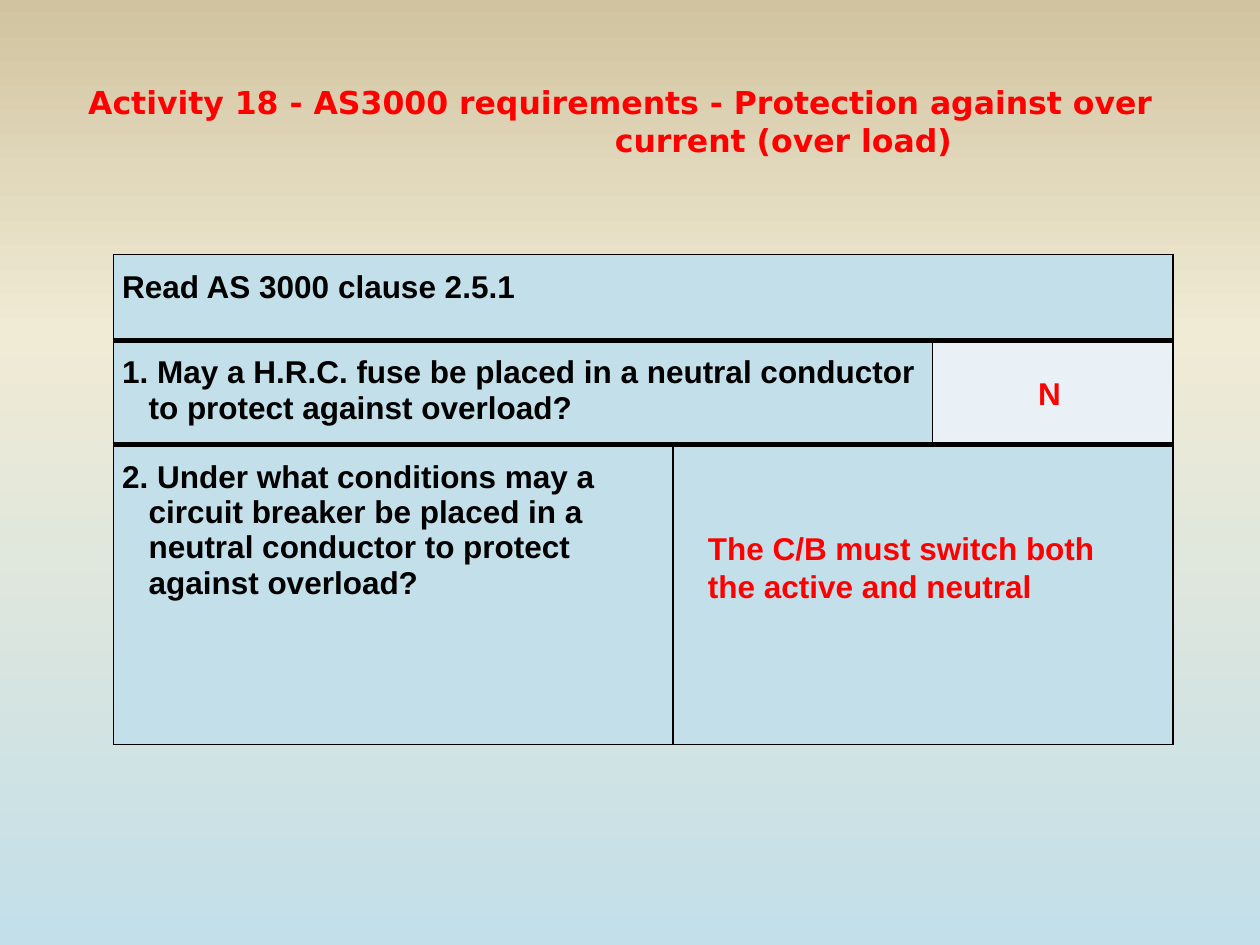
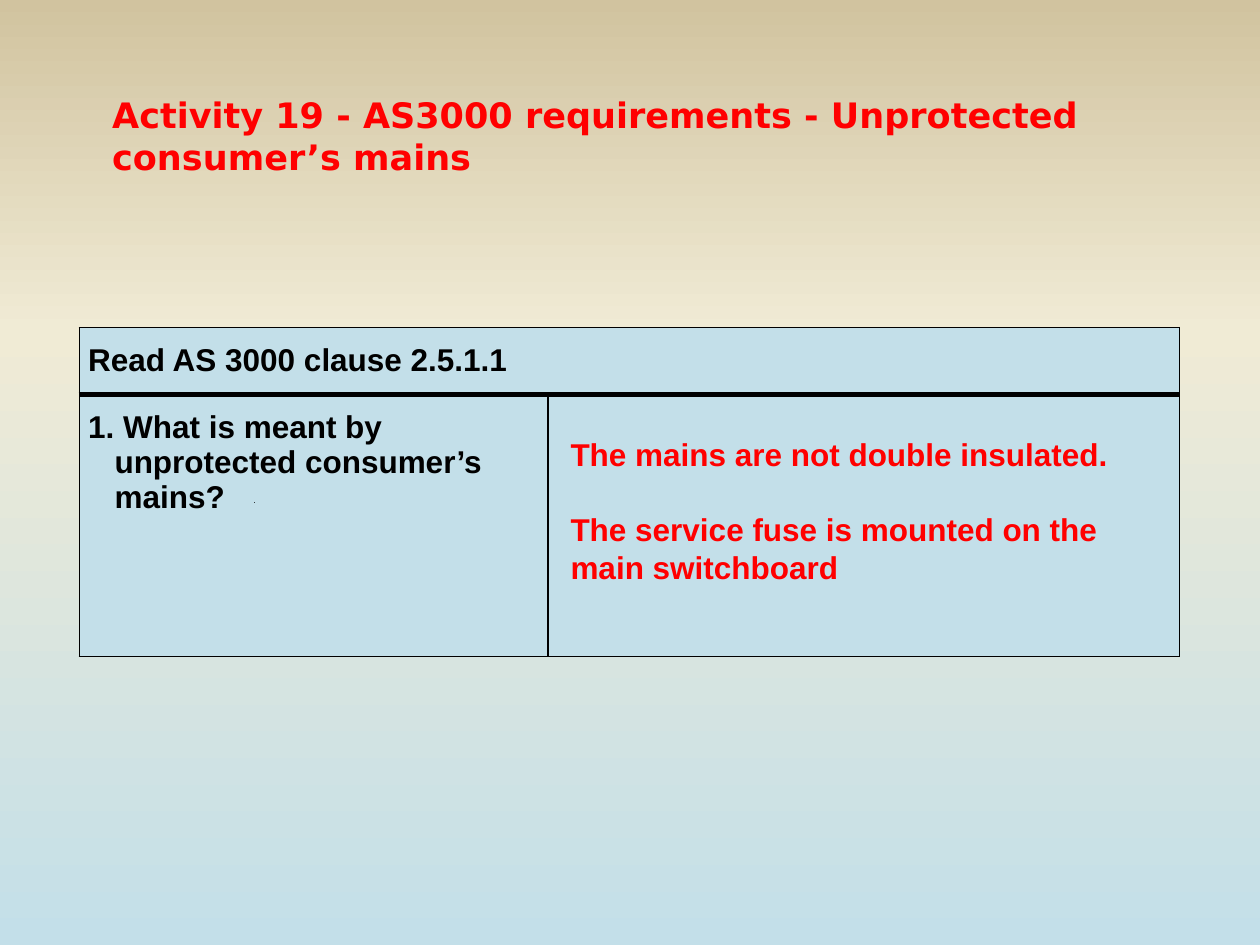
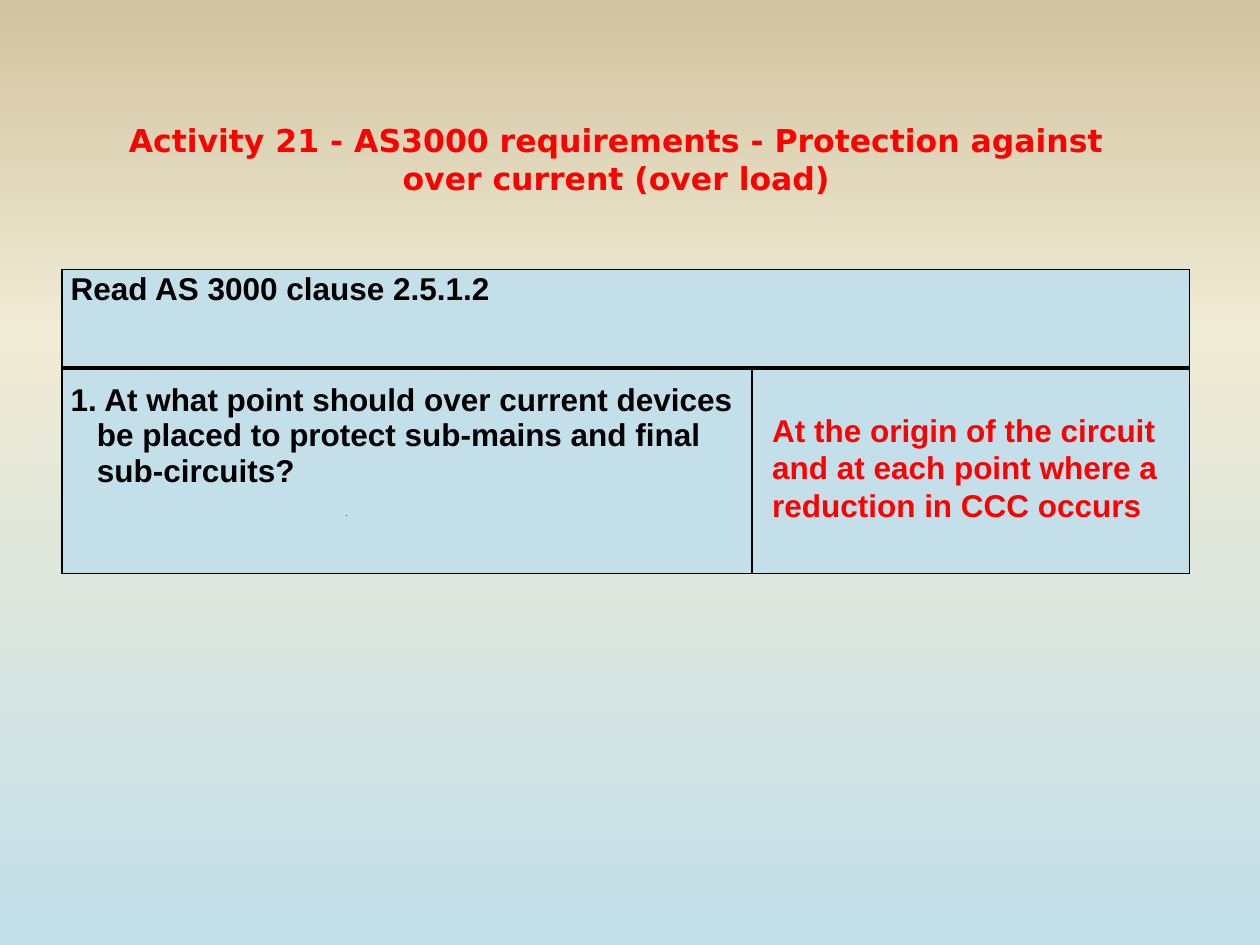
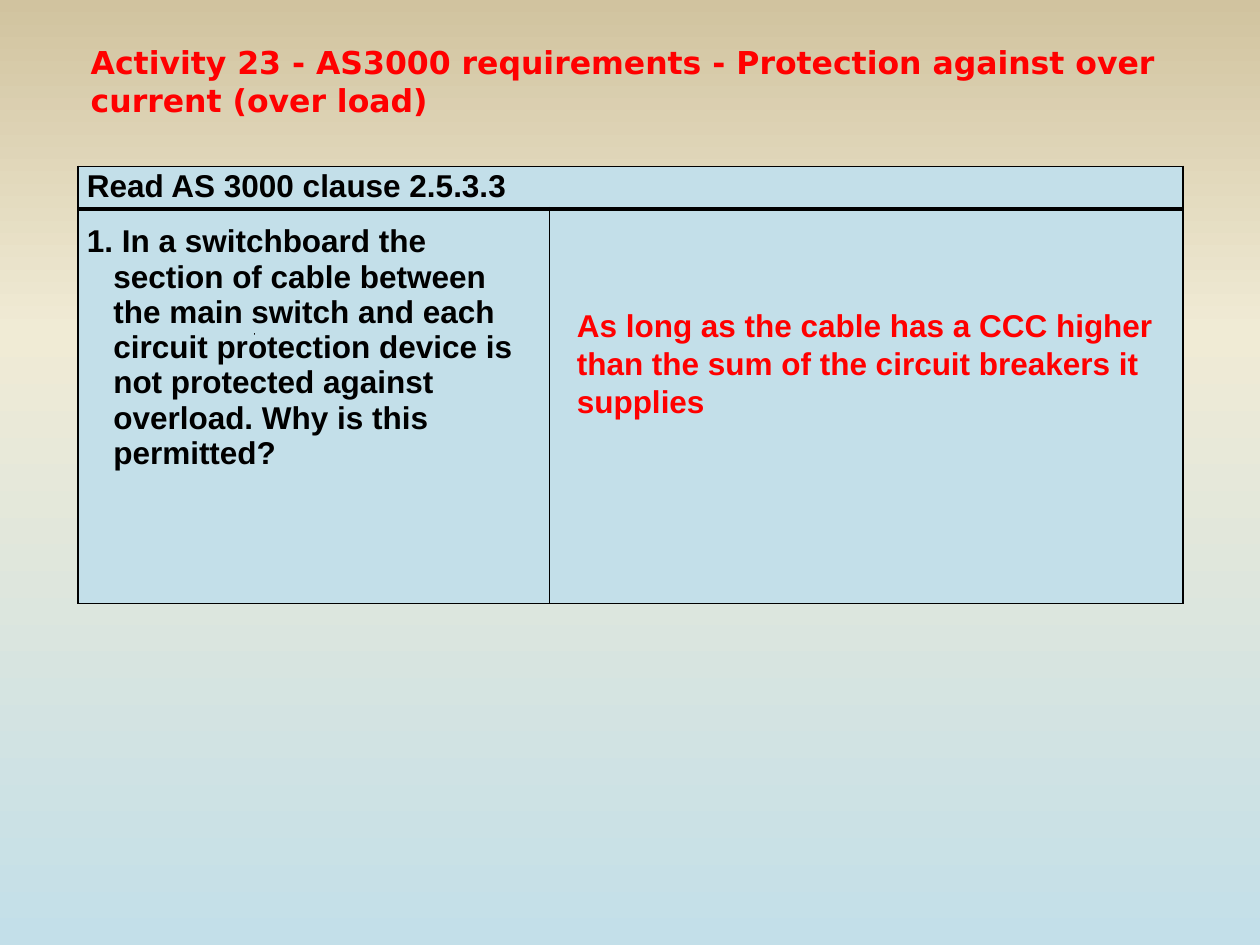
from copy import deepcopy
from pptx import Presentation
from pptx.dml.color import RGBColor
from pptx.enum.shapes import MSO_SHAPE
from pptx.enum.text import MSO_ANCHOR, MSO_AUTO_SIZE, PP_ALIGN
from pptx.oxml import parse_xml
from pptx.oxml.ns import nsdecls, qn
from pptx.util import Inches, Pt

SKY = RGBColor(0xC3, 0xDF, 0xE9)
CREAM = RGBColor(0xF0, 0xEB, 0xD5)
SAND = RGBColor(0xD1, 0xC3, 0x9F)
PALE = RGBColor(0xE9, 0xF1, 0xF7)
RED = RGBColor(0xFF, 0x00, 0x00)
BLACK = RGBColor(0x00, 0x00, 0x00)
TITLE_FONT, BODY_FONT = "DejaVu Sans", "Arial"
HANG = 0.21
TITLE_ONLY = 5


def set_background(master):
    """Vertical gradient shared by all slides, sky at the bottom."""
    fill = master.background.fill
    fill.gradient()
    fill.gradient_angle = 90
    stops = master.element.find(".//" + qn("a:gsLst"))
    stops.insert(1, deepcopy(stops[0]))
    for stop, pos, color in zip(fill.gradient_stops, (0, 0.65, 1), (SKY, CREAM, SAND)):
        stop.position = pos
        stop.color.rgb = color


def add_run(p, text, font, color, size=18):
    r = p.add_run()
    r.text = text
    r.font.name, r.font.size, r.font.bold = font, Pt(size), True
    r.font.color.rgb = color


def set_indent(p, left, first=0):
    pPr = p._p.get_or_add_pPr()
    pPr.set("marL", str(Inches(left)))
    pPr.set("indent", str(Inches(first)))


def fill_text(tf, lines, font, color, size=18, align=PP_ALIGN.LEFT):
    for i, line in enumerate(lines):
        p = tf.paragraphs[0] if i == 0 else tf.add_paragraph()
        p.alignment = align
        add_run(p, line, font, color, size)


def place(sp, left, top, width, height):
    sp.left, sp.top = Inches(left), Inches(top)
    sp.width, sp.height = Inches(width), Inches(height)


def add_title(s, lines, box, size=18, align=PP_ALIGN.LEFT):
    sp = s.shapes.title
    place(sp, *box)
    tf = sp.text_frame
    tf.vertical_anchor, tf.auto_size = MSO_ANCHOR.TOP, MSO_AUTO_SIZE.NONE
    fill_text(tf, lines, TITLE_FONT, RED, size, align)
    return tf


def add_answer(s, lines, box, wrap=True):
    tf = s.shapes.add_textbox(*map(Inches, box)).text_frame
    tf.word_wrap = wrap
    fill_text(tf, lines, BODY_FONT, RED)
    return tf


def add_dot(s, left, top):
    sp = s.shapes.add_shape(MSO_SHAPE.RECTANGLE, Inches(left), Inches(top), 0, 0)
    sp.shadow.inherit = False
    sp.fill.solid()
    sp.fill.fore_color.rgb = SKY
    sp.line.color.rgb, sp.line.width = BLACK, Pt(0.75)


def set_borders(cell, top, bottom):
    tcPr = cell._tc.get_or_add_tcPr()
    for i, (side, width) in enumerate(zip("LRTB", (1, 1, top, bottom))):
        tcPr.insert(i, parse_xml(
            f'<a:ln{side} {nsdecls("a")} w="{Pt(width)}"><a:solidFill>'
            f'<a:srgbClr val="{BLACK}"/></a:solidFill></a:ln{side}>'))


def write_cell(cell, text, header=False):
    p = cell.text_frame.paragraphs[0]
    p.space_before = Pt(6)
    if header:
        p.alignment = PP_ALIGN.JUSTIFY
    else:
        set_indent(p, HANG, -HANG)
    add_run(p, text, BODY_FONT, BLACK)


def add_question_table(s, left, top, cols, rows, texts, header_pad=0.12):
    """First row is the clause; the others hold a question and an answer cell."""
    table = s.shapes.add_table(len(rows), len(cols), Inches(left), Inches(top),
                               Inches(sum(cols)), Inches(sum(rows))).table
    for col, width in zip(table.columns, cols):
        col.width = Inches(width)
    last = len(rows) - 1
    for i, height in enumerate(rows):
        table.rows[i].height = Inches(height)
        pad = 0.12 if i else header_pad
        for cell in table.rows[i].cells:
            cell.margin_left = cell.margin_right = Inches(0.07)
            cell.margin_top = cell.margin_bottom = Inches(pad)
            cell.fill.solid()
            cell.fill.fore_color.rgb = SKY
            set_borders(cell, 3 if i else 1, 3 if i < last else 1)
        write_cell(table.cell(i, 0), texts[i], header=i == 0)
    table.cell(0, 0).merge(table.cell(0, len(cols) - 1))
    return table


def activity_18(s):
    table = add_question_table(
        s, 0.9, 2.02, (4.44, 2.06, 1.91), (0.68, 0.83, 2.38),
        ("Read AS 3000 clause 2.5.1",
         "1. May a H.R.C. fuse be placed in a neutral conductor to protect against overload?",
         "2. Under what conditions may a circuit breaker be placed in a neutral "
         "conductor to protect against overload?"))
    table.cell(1, 0).merge(table.cell(1, 1))
    table.cell(2, 1).merge(table.cell(2, 2))
    table.cell(1, 2).fill.fore_color.rgb = PALE
    add_dot(s, 2.95, 3.2)
    tf = add_title(s, ("Activity 18 - AS3000 requirements - Protection against over",
                       "current (over load)"), (0.6, 0.61, 8.84, 0.71))
    set_indent(tf.paragraphs[1], 4.18)
    add_answer(s, ["N"], (8.14, 2.92, 0.48, 0.4))
    add_answer(s, ["The C/B must switch both the active and neutral"], (5.52, 4.15, 3.6, 0.71))


def activity_19(s):
    add_question_table(
        s, 0.63, 2.6, (3.72, 5.01), (0.53, 2.08),
        ("Read AS 3000 clause 2.5.1.1",
         "1. What is meant by unprotected consumer’s mains?"))
    add_dot(s, 2.02, 3.99)
    add_title(s, ["Activity 19 - AS3000 requirements - Unprotected consumer’s mains"],
              (0.79, 0.69, 8.4, 0.77), size=20)
    tf = add_answer(s, ("The mains are not double insulated.",
                        "The service fuse is mounted on the main switchboard"),
                    (4.43, 3.4, 4.76, 1.31))
    tf.paragraphs[1].space_before = Pt(21.6)


def activity_21(s):
    add_question_table(
        s, 0.49, 2.14, (5.48, 3.47), (0.78, 1.63),
        ("Read AS 3000 clause 2.5.1.2",
         "1. At what point should over current devices be placed to protect "
         "sub-mains and final sub-circuits?"), header_pad=0.02)
    add_dot(s, 2.75, 4.09)
    add_title(s, ["Activity 21 - AS3000 requirements - Protection against over current (over load)"],
              (0.67, 0.91, 8.44, 0.71), align=PP_ALIGN.CENTER)
    add_answer(s, ["At the origin of the circuit and at each point where a reduction in CCC occurs"],
               (6.03, 3.21, 3.35, 1.01))


def activity_23(s):
    add_question_table(
        s, 0.62, 1.32, (3.74, 5.03), (0.34, 3.13),
        ("Read AS 3000 clause 2.5.3.3",
         "1. In a switchboard the section of cable between the main switch and each "
         "circuit protection device is not protected against overload. Why is this permitted?"),
        header_pad=0.02)
    add_dot(s, 2.02, 2.65)
    add_title(s, ["Activity 23 - AS3000 requirements - Protection against over current (over load)"],
              (0.62, 0.29, 8.94, 0.71))
    add_answer(s, ("As long as the cable has a CCC higher",
                   "than the sum of the circuit breakers it",
                   "supplies"), (4.48, 2.38, 4.89, 1.01), wrap=False)


def main():
    prs = Presentation()
    prs.slide_width, prs.slide_height = Inches(10), Inches(7.5)
    set_background(prs.slide_master)
    for build in (activity_18, activity_19, activity_21, activity_23):
        build(prs.slides.add_slide(prs.slide_layouts[TITLE_ONLY]))
    prs.save("out.pptx")


if __name__ == "__main__":
    main()
